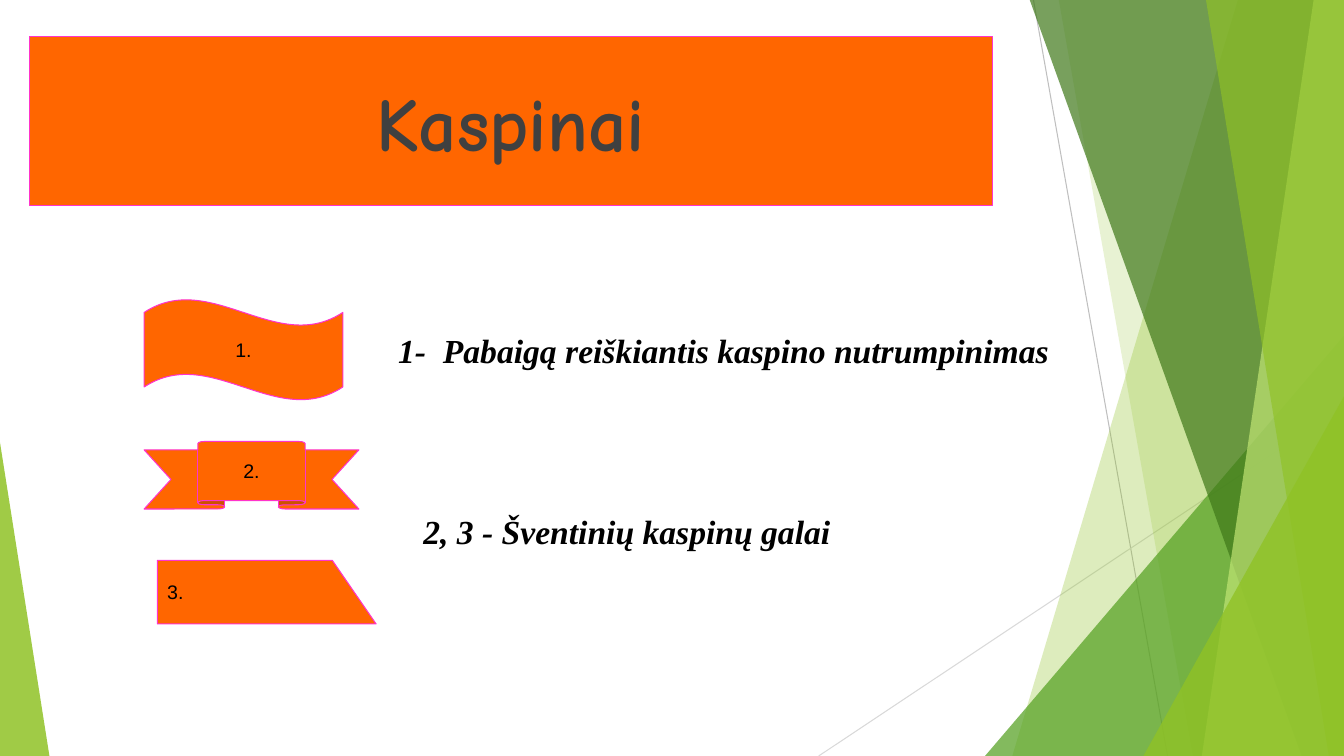
from dataclasses import dataclass

from lxml.etree import SubElement
from pptx import Presentation
from pptx.dml.color import RGBColor
from pptx.enum.shapes import MSO_CONNECTOR, MSO_SHAPE
from pptx.enum.text import MSO_ANCHOR, MSO_AUTO_SIZE, PP_ALIGN
from pptx.oxml import parse_xml
from pptx.oxml.ns import nsdecls, qn
from pptx.util import Inches, Pt

COLORS = {
    "orange": "FF6600", "pink": "FF33CC", "black": "000000", "title": "404040",
    "green": "90C226", "leaf": "54A021", "forest": "3F7819", "lime": "C0E474",
    "gray": "BFBFBF", "silver": "D9D9D9",
}
WIDTH, HEIGHT, TOP = 13.33, 7.5, -0.01


@dataclass
class Ray:
    start: tuple[float, float]
    end: tuple[float, float]
    color: str


@dataclass
class Facet:
    """Band from a slanted left edge to the right side of the slide."""
    top_x: float
    bottom_x: float
    color: str
    alpha: int


@dataclass
class Wedge:
    """Triangle standing on the bottom of the slide."""
    left: float
    top: float
    width: float
    apex: float
    color: str
    alpha: int


@dataclass
class Ribbon:
    text: str
    kind: MSO_SHAPE
    box: tuple[float, float, float, float]
    adjustments: tuple[float, ...] = ()
    rotation: int = 0


@dataclass
class Caption:
    text: str
    box: tuple[float, float, float, float]


RAYS = [
    Ray((10.25, 0), (11.58, HEIGHT), "gray"),
    Ray((WIDTH, 4.03), (8.12, HEIGHT), "silver"),
]
BACKDROP = [
    Facet(12.28, 10.04, "green", 30),
    Facet(10.5, 11.83, "green", 20),
    Wedge(9.77, 3.33, 3.56, 1, "leaf", 72),
    Facet(10.21, 12.91, "forest", 70),
    Facet(13.03, 11.92, "lime", 70),
    Facet(11.96, 13.18, "green", 65),
    Wedge(11.34, 3.93, 1.99, 1, "green", 80),
    Wedge(0, 4.39, 0.49, 0, "green", 85),
]
RIBBONS = [
    Ribbon("1.", MSO_SHAPE.WAVE, (1.43, 2.97, 1.97, 1), (0.13, 0)),
    Ribbon("2.", MSO_SHAPE.UP_RIBBON, (1.43, 4.38, 2.13, 0.67), (0.125, 0.5)),
    Ribbon("3.", MSO_SHAPE.FLOWCHART_MANUAL_INPUT, (2.33, 4.79, 0.63, 2.17), rotation=90),
]
CAPTIONS = [
    Caption("1-  Pabaigą reiškiantis kaspino nutrumpinimas", (3.85, 3.22, 6.72, 0.5)),
    Caption("2, 3 - Šventinių kaspinų galai", (4.1, 5.02, 4.28, 0.5)),
]


def rgb(name: str) -> RGBColor:
    return RGBColor.from_string(COLORS[name])


def add_run(p, text: str, font: str, size: int, color: str,
            bold: bool = False, italic: bool = False) -> None:
    r = p.add_run()
    r.text = text
    r.font.name, r.font.size = font, Pt(size)
    r.font.bold, r.font.italic = bold, italic
    r.font.color.rgb = rgb(color)


def style_ribbon(sp) -> None:
    sp.fill.solid()
    sp.fill.fore_color.rgb = rgb("orange")
    sp.line.color.rgb = rgb("pink")
    sp.line.width = Pt(0.75)


def add_ray(s, ray: Ray) -> None:
    points = [Inches(v) for v in (*ray.start, *ray.end)]
    line = s.shapes.add_connector(MSO_CONNECTOR.STRAIGHT, *points)
    line.line.color.rgb = rgb(ray.color)
    line.line.width = Pt(0.75)
    SubElement(line._element.spPr, qn("a:effectLst"))


def add_pane(s, pane: Facet | Wedge) -> None:
    if isinstance(pane, Facet):
        corners = [(pane.top_x, TOP), (WIDTH, TOP), (WIDTH, HEIGHT), (pane.bottom_x, HEIGHT)]
        points = [(Inches(x), Inches(y)) for x, y in corners]
        builder = s.shapes.build_freeform(*points[0])
        builder.add_line_segments(points[1:], close=True)
        sp = builder.convert_to_shape()
    else:
        box = (pane.left, pane.top, pane.width, HEIGHT - pane.top)
        sp = s.shapes.add_shape(MSO_SHAPE.ISOSCELES_TRIANGLE, *map(Inches, box))
        sp.adjustments[0] = pane.apex
    sp.shadow.inherit = False
    sp.line.fill.background()
    sp.fill.solid()
    sp.fill.fore_color.rgb = rgb(pane.color)
    color = sp._element.spPr.find(qn("a:solidFill"))[0]
    SubElement(color, qn("a:alpha"), val=str(pane.alpha * 1000))


def add_title(s, text: str) -> None:
    sp = s.shapes.title
    sp.left, sp.top, sp.width, sp.height = map(Inches, (0.29, 0.36, 9.55, 1.68))
    # Ribbon outline for the placeholder
    sp._element.spPr.insert(1, parse_xml(
        f'<a:prstGeom {nsdecls("a")} prst="ribbon2"><a:avLst>'
        '<a:gd name="adj1" fmla="val 33333"/><a:gd name="adj2" fmla="val 50000"/>'
        '</a:avLst></a:prstGeom>'))
    style_ribbon(sp)
    tf = sp.text_frame
    tf.auto_size = MSO_AUTO_SIZE.NONE
    tf.vertical_anchor = MSO_ANCHOR.MIDDLE
    p = tf.paragraphs[0]
    p.alignment = PP_ALIGN.CENTER
    add_run(p, text, "Comic Neue", 54, "title", bold=True)
    # Bring the title in front of the backdrop
    s.shapes._spTree.append(sp._element)


def add_ribbon(s, ribbon: Ribbon) -> None:
    sp = s.shapes.add_shape(ribbon.kind, *map(Inches, ribbon.box))
    for i, value in enumerate(ribbon.adjustments):
        sp.adjustments[i] = value
    sp.shadow.inherit = False
    style_ribbon(sp)
    tf = sp.text_frame
    tf.word_wrap = False
    tf.vertical_anchor = MSO_ANCHOR.MIDDLE
    if ribbon.rotation:
        sp.rotation = ribbon.rotation
        # Keep the number upright in the turned shape
        body = tf._txBody.bodyPr
        body.set("rot", "10800000")
        body.set("vert", "eaVert")
    p = tf.paragraphs[0]
    p.alignment = PP_ALIGN.CENTER
    add_run(p, ribbon.text, "Arial", 14, "black")


def add_caption(s, caption: Caption) -> None:
    tf = s.shapes.add_textbox(*map(Inches, caption.box)).text_frame
    tf.word_wrap = False
    tf.auto_size = MSO_AUTO_SIZE.SHAPE_TO_FIT_TEXT
    add_run(tf.paragraphs[0], caption.text, "Times New Roman", 24, "black",
            bold=True, italic=True)


def main() -> None:
    prs = Presentation()
    prs.slide_width, prs.slide_height = Inches(WIDTH), Inches(HEIGHT)
    s = prs.slides.add_slide(prs.slide_layouts[5])
    # Green backdrop
    for ray in RAYS:
        add_ray(s, ray)
    for pane in BACKDROP:
        add_pane(s, pane)
    # Title, numbered ribbons and their captions
    add_title(s, "Kaspinai")
    for ribbon in RIBBONS:
        add_ribbon(s, ribbon)
    for caption in CAPTIONS:
        add_caption(s, caption)
    prs.save("out.pptx")


if __name__ == "__main__":
    main()
